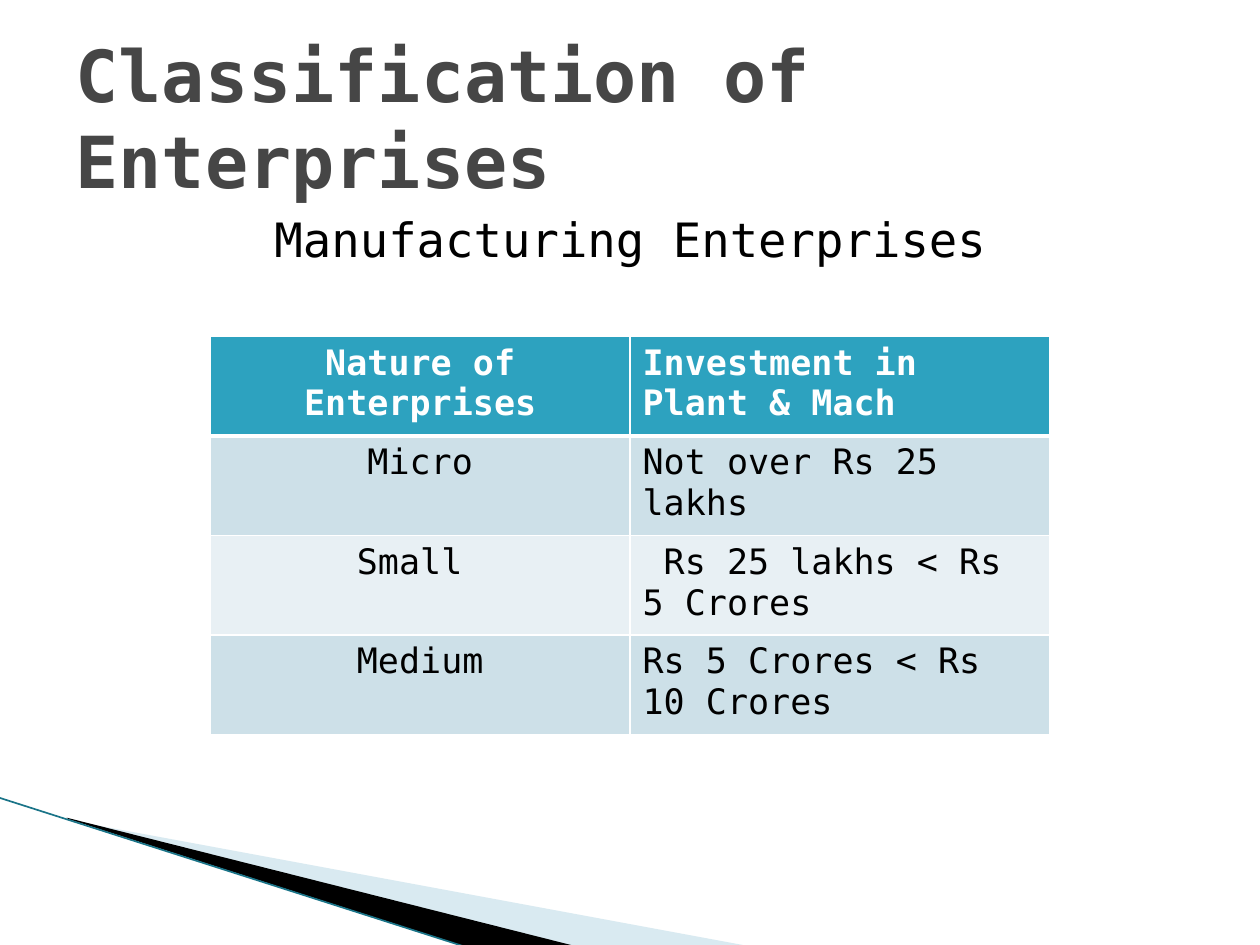
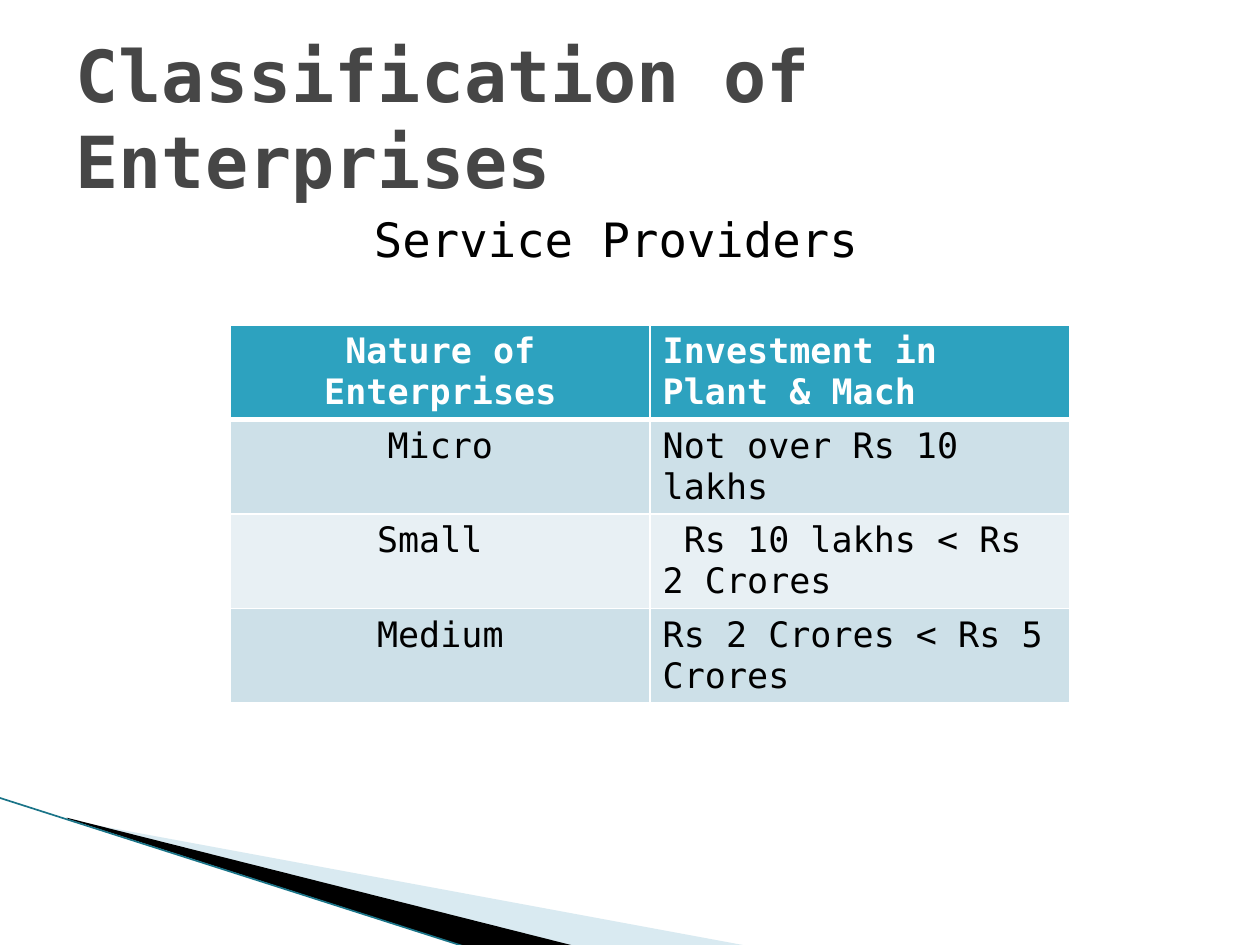
import pptx
import pptx.dml.color
import pptx.enum.shapes
import pptx.enum.text
import pptx.oxml
import pptx.oxml.ns
import pptx.util
from lxml import etree

Inches, Pt = pptx.util.Inches, pptx.util.Pt
PP_ALIGN = pptx.enum.text.PP_ALIGN
qn = pptx.oxml.ns.qn

# Shared style
FONT = "DejaVu Sans Mono"
BLACK, WHITE = "000000", "FFFFFF"
TITLE_GREY = "464646"
TEAL, EDGE_TEAL, PALE_BLUE = "2DA2BF", "1A7488", "A0CBDC"
BAND_DARK, BAND_LIGHT = "CDE0E8", "E8F0F4"

TITLE = "Classification of Enterprises"
HEADER = ("Nature of Enterprises", "Investment in Plant & Mach")
COLUMN_WIDTH = 3.33


def rgb(color):
    return pptx.dml.color.RGBColor.from_string(color)


def add_run(p, text, size, color, bold=False):
    r = p.add_run()
    r.text = text
    r.font.name = FONT
    r.font.size = Pt(size)
    r.font.bold = bold
    r.font.color.rgb = rgb(color)


def place(sp, left, top, width, height):
    sp.left, sp.top = Inches(left), Inches(top)
    sp.width, sp.height = Inches(width), Inches(height)


# Corner decoration
def add_wedge(slide, points, color, opacity=100):
    (x, y), *rest = [(Inches(a), Inches(b)) for a, b in points]
    builder = slide.shapes.build_freeform(x, y)
    builder.add_line_segments(rest, close=True)
    sp = builder.convert_to_shape()
    sp.shadow.inherit = False
    sp.fill.solid()
    sp.fill.fore_color.rgb = rgb(color)
    sp.line.fill.background()
    if opacity < 100:
        fill = sp.fill._xPr.find(qn("a:solidFill"))
        etree.SubElement(fill[0], qn("a:alpha"), val=str(opacity * 1000))


def add_corner(slide):
    add_wedge(slide, [(0.55, 6.51), (5.95, 7.51), (4.56, 7.51), (0.55, 6.5)],
              PALE_BLUE, opacity=40)
    add_wedge(slide, [(0.53, 6.49), (4.57, 7.51), (3.72, 7.52), (0.54, 6.5)], BLACK)
    edge = slide.shapes.add_connector(
        pptx.enum.shapes.MSO_CONNECTOR.STRAIGHT,
        Inches(-0.01), Inches(6.33), Inches(3.71), Inches(7.52))
    edge.line.color.rgb = rgb(EDGE_TEAL)
    edge.line.width = Pt(0.95)
    etree.SubElement(edge._element.spPr, qn("a:effectLst"))


# Title and subtitle placeholders
def add_title(slide):
    sp = slide.shapes.title
    place(sp, 0.5, 0.3, 9, 1.25)
    tf = sp.text_frame
    tf.auto_size = pptx.enum.text.MSO_AUTO_SIZE.NONE
    tf.vertical_anchor = pptx.enum.text.MSO_ANCHOR.MIDDLE
    p = tf.paragraphs[0]
    p.alignment = PP_ALIGN.LEFT
    add_run(p, TITLE, 41, TITLE_GREY, bold=True)


def add_subtitle(slide, text):
    sp = slide.placeholders[1]
    place(sp, 0.5, 1.62, 9, 4.95)
    tf = sp.text_frame
    tf.auto_size = pptx.enum.text.MSO_AUTO_SIZE.NONE
    p = tf.paragraphs[0]
    p.alignment = PP_ALIGN.CENTER
    p.space_before = Pt(4)
    pPr = p._p.get_or_add_pPr()
    pPr.set("marL", "0")
    pPr.set("indent", "0")
    etree.SubElement(pPr, qn("a:buNone"))
    add_run(p, text, 27, BLACK)


# Table
def set_borders(cell, top, bottom):
    tcPr = cell._tc.get_or_add_tcPr()
    widths = {"lnL": 1, "lnR": 1, "lnT": top, "lnB": bottom}
    for i, (side, width) in enumerate(widths.items()):
        ln = etree.Element(qn("a:" + side), w=str(Pt(width)))
        fill = etree.SubElement(ln, qn("a:solidFill"))
        etree.SubElement(fill, qn("a:srgbClr"), val=WHITE)
        tcPr.insert(i, ln)


def add_enterprise_table(slide, left, top, row_height, limits):
    rows = [HEADER, *zip(("Micro", "Small ", "Medium"), limits)]
    table = slide.shapes.add_table(
        len(rows), 2, Inches(left), Inches(top),
        Inches(2 * COLUMN_WIDTH), Inches(row_height * len(rows))).table
    for column in table.columns:
        column.width = Inches(COLUMN_WIDTH)
    for i, texts in enumerate(rows):
        table.rows[i].height = Inches(row_height)
        header = i == 0
        band = TEAL if header else (BAND_LIGHT, BAND_DARK)[i % 2]
        for j, text in enumerate(texts):
            cell = table.cell(i, j)
            cell.fill.solid()
            cell.fill.fore_color.rgb = rgb(band)
            set_borders(cell, top=3 if i == 1 else 1, bottom=3 if header else 1)
            p = cell.text_frame.paragraphs[0]
            p.alignment = PP_ALIGN.LEFT if j else PP_ALIGN.CENTER
            add_run(p, text, 20, WHITE if header else BLACK, bold=header)


def add_classification_slide(prs, subtitle, left, top, row_height, limits):
    slide = prs.slides.add_slide(prs.slide_layouts[1])
    add_corner(slide)
    add_title(slide)
    add_subtitle(slide, subtitle)
    add_enterprise_table(slide, left, top, row_height, limits)


def main():
    prs = pptx.Presentation()
    prs.slide_width, prs.slide_height = Inches(10), Inches(7.5)
    add_classification_slide(
        prs, "Manufacturing Enterprises", 1.67, 2.67, 0.79,
        ("Not over Rs 25 lakhs", " Rs 25 lakhs < Rs 5 Crores",
         "Rs 5 Crores < Rs 10 Crores"))
    add_classification_slide(
        prs, "Service Providers ", 1.83, 2.58, 0.75,
        ("Not over Rs 10 lakhs", " Rs 10 lakhs < Rs 2 Crores",
         "Rs 2 Crores < Rs 5 Crores"))
    prs.save("out.pptx")


if __name__ == "__main__":
    main()
